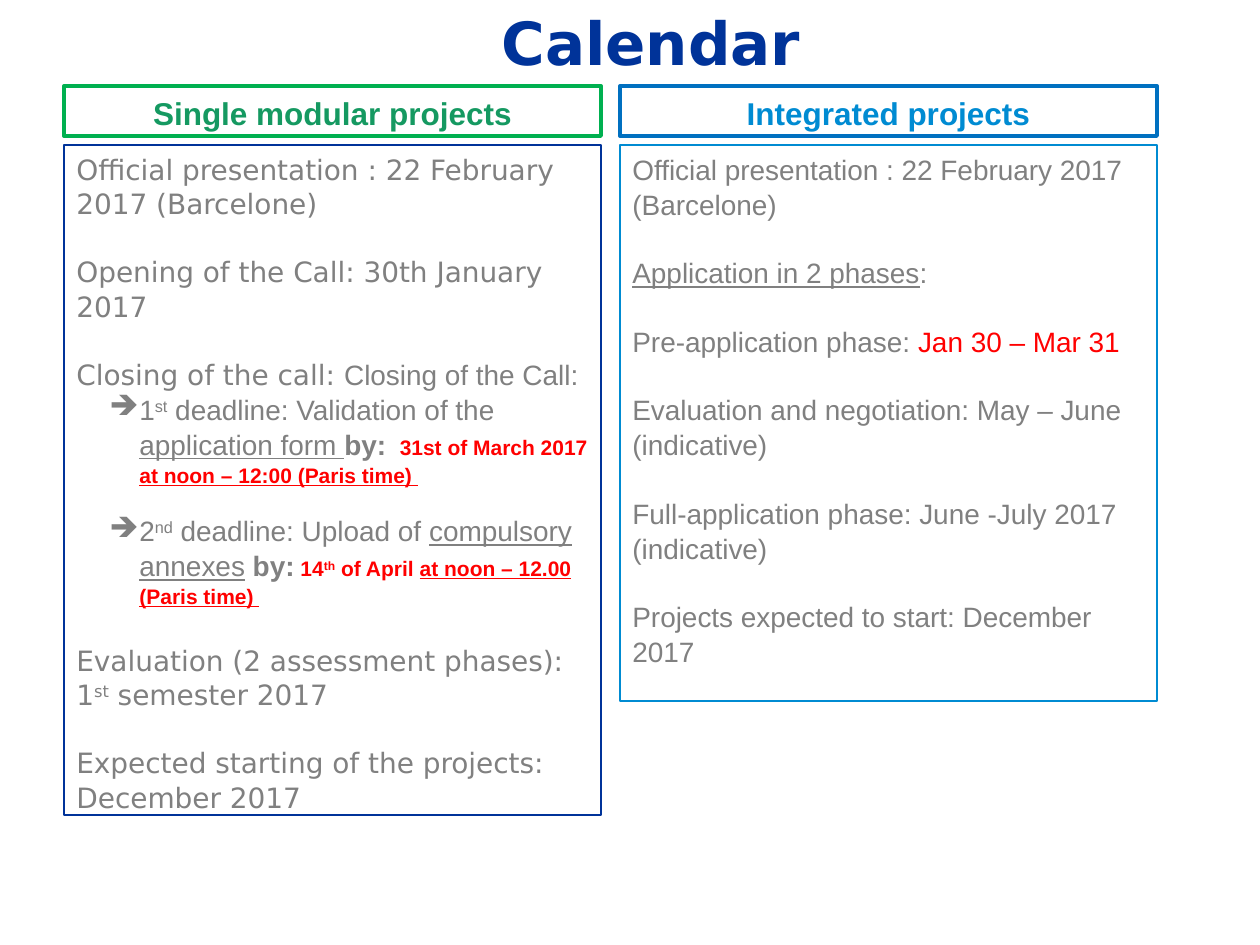
from dataclasses import dataclass, field
from functools import partial

from lxml.etree import SubElement
from pptx import Presentation
from pptx.dml.color import RGBColor
from pptx.enum.shapes import MSO_SHAPE
from pptx.enum.text import MSO_ANCHOR, PP_ALIGN
from pptx.oxml.ns import qn
from pptx.util import Emu, Pt

PX_PER_INCH = 126


def px(length):
    return Emu(round(length * 914400 / PX_PER_INCH))


@dataclass(frozen=True)
class Theme:
    sans: str = "Arial"
    wide: str = "DejaVu Sans"
    navy: str = "003399"
    sky: str = "008BD2"
    blue: str = "0070C0"
    leaf: str = "00B050"
    green: str = "159961"
    grey: str = "808080"
    red: str = "FF0000"
    title: int = 34
    heading: int = 18
    body: int = 16
    detail: int = 12
    thin: float = 1.5
    thick: float = 2.25
    leading: dict = field(default_factory=lambda: {"Arial": 1.04, "DejaVu Sans": 1.03})


THEME = Theme()


@dataclass
class Span:
    text: str
    font: str = THEME.sans
    size: int = THEME.body
    color: str = THEME.grey
    bold: bool = False
    underline: bool = False
    raised: bool = False


@dataclass
class Entry:
    spans: list
    before: float = 0
    bullet: str = ""


class CalendarSlide:
    def __init__(self, slide, theme):
        self.slide = slide
        self.theme = theme

    def add_span(self, paragraph, span):
        run = paragraph.add_run()
        run.text = span.text
        run.font.name = span.font
        run.font.size = Pt(span.size)
        run.font.bold = span.bold
        run.font.underline = span.underline
        run.font.color.rgb = RGBColor.from_string(span.color)
        if span.raised:
            run._r.get_or_add_rPr().set("baseline", "30000")

    def fill_text(self, frame, entries, align):
        frame.word_wrap = True
        for index, entry in enumerate(entries):
            paragraph = frame.add_paragraph() if index else frame.paragraphs[0]
            paragraph.alignment = align
            paragraph.line_spacing = self.theme.leading[entry.spans[0].font]
            paragraph.space_before = Pt(entry.before)
            if entry.bullet:
                properties = paragraph._p.get_or_add_pPr()
                properties.set("marL", str(px(63)))
                properties.set("indent", str(-px(30)))
                SubElement(properties, qn("a:buChar")).set("char", entry.bullet)
            for span in entry.spans:
                self.add_span(paragraph, span)

    def frame(self, box, line, width, entries, align=PP_ALIGN.LEFT):
        """Draw an outlined rectangle holding text."""
        panel = self.slide.shapes.add_shape(MSO_SHAPE.RECTANGLE, *map(px, box))
        panel.shadow.inherit = False
        panel.fill.background()
        panel.line.color.rgb = RGBColor.from_string(line)
        panel.line.width = Pt(width)
        panel.text_frame.vertical_anchor = MSO_ANCHOR.TOP
        self.fill_text(panel.text_frame, entries, align)

    def heading(self, box, line, text, color):
        label = Span(text, size=self.theme.heading, color=color, bold=True)
        self.frame(box, line, self.theme.thick, [Entry([label])], PP_ALIGN.CENTER)

    def title(self, box, text):
        banner = self.slide.shapes.add_textbox(*map(px, box)).text_frame
        banner.vertical_anchor = MSO_ANCHOR.MIDDLE
        label = Span(text, self.theme.wide, self.theme.title, self.theme.navy, bold=True)
        self.fill_text(banner, [Entry([label])], PP_ALIGN.CENTER)


def main():
    presentation = Presentation()
    presentation.slide_width = px(1260)
    presentation.slide_height = px(945)
    calendar = CalendarSlide(
        presentation.slides.add_slide(presentation.slide_layouts[6]), THEME)

    wide = partial(Span, font=THEME.wide)
    due = partial(Span, size=THEME.detail, color=THEME.red, bold=True)
    line_gap, deadline_gap = 19.2, 14.4
    modular_x, integrated_x, column_width = 64, 620, 537
    heading_y, heading_height, panel_y = 86, 50, 145

    modular_dates = [
        Entry([wide("Official presentation : 22 February 2017 (Barcelone)")]),
        Entry([wide("Opening of the Call: 30th January 2017")], line_gap),
        Entry([wide("Closing of the call: "), Span("Closing of the Call:")], line_gap),
        Entry([
            Span("1"), Span("st", raised=True),
            Span(" deadline: Validation of the "),
            Span("application form ", underline=True),
            Span("by: ", bold=True), due(" 31st of March 2017 "),
            due("at noon – 12:00 (Paris time) ", underline=True),
        ], bullet="➔"),
        Entry([
            Span("2"), Span("nd", raised=True),
            Span(" deadline: Upload of "),
            Span("compulsory annexes", underline=True),
            Span(" "), Span("by:", bold=True),
            due(" 14"), due("th", raised=True), due(" of April "),
            due("at noon – 12.00 (Paris time) ", underline=True),
        ], deadline_gap, "➔"),
        Entry([
            wide("Evaluation (2 assessment phases): 1"),
            wide("st", raised=True), wide(" semester 2017"),
        ], line_gap),
        Entry([wide("Expected starting of the projects:")], line_gap),
        Entry([wide("December 2017")]),
    ]
    integrated_dates = [
        Entry([Span("Official presentation : 22 February 2017 (Barcelone)")]),
        Entry([Span("Application in 2 phases", underline=True), Span(":")], line_gap),
        Entry([Span("Pre-application phase: "),
               Span("Jan 30 – Mar 31", color=THEME.red)], line_gap),
        Entry([Span("Evaluation and negotiation: May – June (indicative)")], line_gap),
        Entry([Span("Full-application phase: June -July 2017 (indicative)")], line_gap),
        Entry([Span("Projects expected to start: December 2017")], line_gap),
    ]

    calendar.frame((modular_x, panel_y, column_width, 670),
                   THEME.navy, THEME.thin, modular_dates)
    calendar.title((84, -4, 1134, 89), "Calendar")
    calendar.frame((integrated_x, panel_y, column_width, 556),
                   THEME.sky, THEME.thin, integrated_dates)
    calendar.heading((modular_x, heading_y, column_width, heading_height),
                     THEME.leaf, "Single modular projects", THEME.green)
    calendar.heading((integrated_x, heading_y, column_width, heading_height),
                     THEME.blue, "Integrated projects", THEME.sky)

    presentation.save("out.pptx")


if __name__ == "__main__":
    main()
